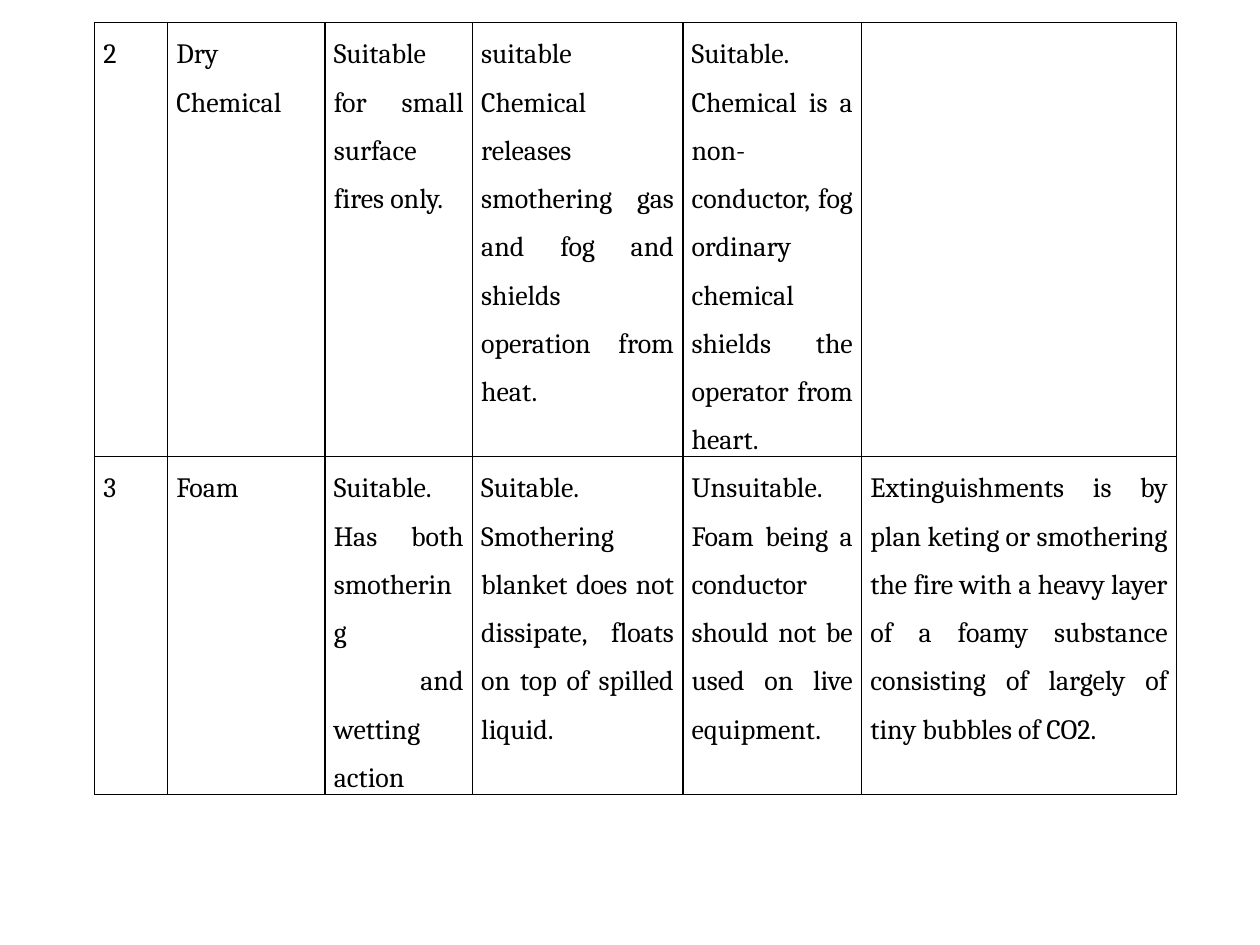
"""Build a slide with a bordered table of fire extinguisher types and their uses."""

from lxml.etree import SubElement
from pptx import Presentation
from pptx.dml.color import RGBColor
from pptx.enum.text import PP_ALIGN as Align
from pptx.oxml.ns import qn
from pptx.util import Inches, Pt

COLORS = {"ink": "000000", "paper": "FFFFFF"}
FONT_NAME = "Cambria"
FONT_SIZE = 16
LEFT, TOP = 0.75, 0.18
COLUMN_WIDTHS = [0.58, 1.25, 1.17, 1.67, 1.42, 2.5]
ROW_HEIGHTS = [3.44, 2.68]
SIDE_MARGIN = 0.07

EXTINGUISHERS = [
    [
        "2",
        "Dry Chemical",
        "Suitable for small surface fires only.",
        "suitable Chemical releases smothering gas and fog and shields operation from heat.",
        "Suitable. Chemical is a non-conductor, fog ordinary chemical shields the operator from heart.",
        "",
    ],
    [
        "3",
        "Foam",
        "Suitable. Has both smothering\n and wetting action",
        "Suitable. Smothering blanket does not dissipate, floats on top of spilled liquid.",
        "Unsuitable. Foam being a conductor should not be used on live equipment.",
        "Extinguishments is by plan keting or smothering the fire with a heavy layer "
        "of a foamy substance consisting of largely of tiny bubbles of CO2.",
    ],
]


def add_borders(cell):
    properties = cell._tc.get_or_add_tcPr()
    for position, side in enumerate(("lnL", "lnR", "lnT", "lnB")):
        line = properties.makeelement(qn(f"a:{side}"), {"w": str(Pt(1))})
        fill = SubElement(line, qn("a:solidFill"))
        SubElement(fill, qn("a:srgbClr"), val=COLORS["ink"])
        properties.insert(position, line)


def fill_cell(cell, text):
    cell.margin_left = cell.margin_right = Inches(SIDE_MARGIN)
    cell.margin_top = cell.margin_bottom = 0
    cell.fill.solid()
    cell.fill.fore_color.rgb = RGBColor.from_string(COLORS["paper"])
    add_borders(cell)
    cell.text = text
    for para in cell.text_frame.paragraphs:
        para.alignment = Align.JUSTIFY
        para.line_spacing = 1.5
        para.font.name = FONT_NAME
        para.font.size = Pt(FONT_SIZE)
        para.font.bold = False
        para.font.color.rgb = RGBColor.from_string(COLORS["ink"])


def main():
    deck = Presentation()
    deck.slide_width, deck.slide_height = Inches(10), Inches(7.5)
    slide = deck.slides.add_slide(deck.slide_layouts[6])
    table = slide.shapes.add_table(
        len(ROW_HEIGHTS), len(COLUMN_WIDTHS), Inches(LEFT), Inches(TOP),
        Inches(sum(COLUMN_WIDTHS)), Inches(sum(ROW_HEIGHTS)),
    ).table
    table.first_row = table.horz_banding = False
    for column, width in zip(table.columns, COLUMN_WIDTHS):
        column.width = Inches(width)
    for row, height, texts in zip(table.rows, ROW_HEIGHTS, EXTINGUISHERS):
        row.height = Inches(height)
        for cell, text in zip(row.cells, texts):
            fill_cell(cell, text)
    deck.save("out.pptx")


if __name__ == "__main__":
    main()
